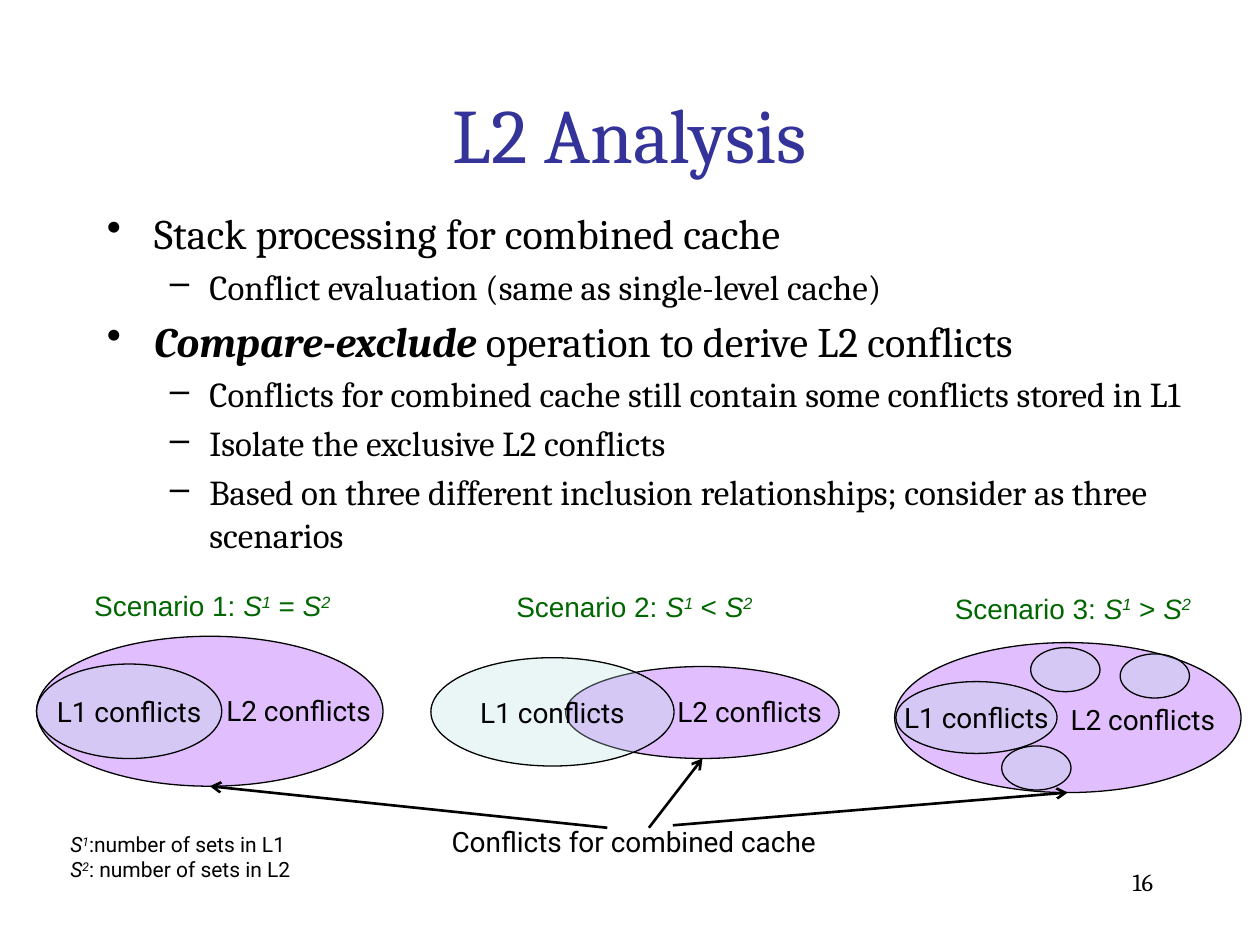
from dataclasses import dataclass

from lxml.etree import SubElement
from pptx import Presentation
from pptx.dml.color import RGBColor
from pptx.enum.shapes import MSO_CONNECTOR, MSO_SHAPE
from pptx.enum.text import MSO_ANCHOR, PP_ALIGN
from pptx.oxml.ns import qn
from pptx.util import Inches, Pt


@dataclass(frozen=True)
class Theme:
    ink: str = "000000"
    title: str = "333399"
    scenario: str = "006600"
    outer: str = "E1BEFE"
    inner: str = "BBE0E3"
    serif: str = "Cambria"
    sans: str = "Arial"
    label: str = "Roboto"
    title_size: int = 44
    body_sizes: tuple = (24, 20)
    label_size: int = 16
    number_size: int = 14
    note_size: int = 12


theme = Theme()
deck = Presentation()
deck.slide_width, deck.slide_height = Inches(10), Inches(7.5)
page = deck.slides.add_slide(deck.slide_layouts[6])

# Grid of 100 columns by 75 rows
column, row = deck.slide_width / 100, deck.slide_height / 75


def place(kind, left, top, width, height, fill=None, alpha=100):
    """Add a text box (kind None) or an outlined preset shape on the grid."""
    area = [int(left * column), int(top * row), int(width * column), int(height * row)]
    if kind is None:
        shape = page.shapes.add_textbox(*area)
    else:
        shape = page.shapes.add_shape(kind, *area)
        shape.shadow.inherit = False
        shape.fill.solid()
        shape.fill.fore_color.rgb = RGBColor.from_string(fill)
        if alpha < 100:
            color = shape.fill._xPr.find(qn("a:solidFill"))[0]
            SubElement(color, qn("a:alpha")).set("val", str(alpha * 1000))
        shape.line.color.rgb = RGBColor.from_string(theme.ink)
        shape.line.width = Pt(0.75)
    shape.text_frame.word_wrap = True
    shape.text_frame.vertical_anchor = MSO_ANCHOR.MIDDLE
    return shape


def write(para, spans, font, size, color=theme.ink, align=PP_ALIGN.CENTER):
    """Add (text, style) spans: b bold, i italic, s superscript."""
    para.alignment = align
    for text, style in spans:
        span = para.add_run()
        span.text = text
        span.font.name, span.font.size = font, Pt(size)
        span.font.color.rgb = RGBColor.from_string(color)
        span.font.bold, span.font.italic = "b" in style, "i" in style
        if "s" in style:
            span.font._element.set("baseline", "30000")


# Title
box = place(None, 7.5, 4.3, 85, 12.5)
write(box.text_frame.paragraphs[0], [("L2 Analysis", "")],
      theme.serif, theme.title_size, theme.title)

# Bulleted body
bullets = [
    (0, [("Stack processing for combined cache", "")]),
    (1, [("Conflict evaluation (same as single-level cache)", "")]),
    (0, [("Compare-exclude ", "bi"), ("operation to derive L2 conflicts", "")]),
    (1, [("Conflicts for combined cache still contain some conflicts stored in L1", "")]),
    (1, [("Isolate the exclusive L2 conflicts", "")]),
    (1, [("Based on three different inclusion relationships; "
          "consider as three scenarios", "")]),
]
marks = [("•", 3.75, 3.75), ("–", 8.13, 3.13)]
box = place(None, 7.5, 16, 88.2, 50.7)
box.text_frame.vertical_anchor = MSO_ANCHOR.TOP
for index, (level, spans) in enumerate(bullets):
    para = box.text_frame.add_paragraph() if index else box.text_frame.paragraphs[0]
    mark, margin, hang = marks[level]
    size = theme.body_sizes[level]
    para.level = level
    if index:
        para.space_before = Pt(size * 0.2)
    settings = para._p.get_or_add_pPr()
    settings.set("marL", str(int(margin * column)))
    settings.set("indent", str(int(-hang * column)))
    SubElement(settings, qn("a:buChar")).set("char", mark)
    write(para, spans, theme.serif, size, align=PP_ALIGN.LEFT)

# Slide number
box = place(None, 71.7, 68.3, 20.8, 5)
box.text_frame.vertical_anchor = MSO_ANCHOR.TOP
write(box.text_frame.paragraphs[0], [("16", "")], theme.serif, theme.number_size,
      align=PP_ALIGN.RIGHT)

# Scenarios: relation, heading, L2 ellipse, L1 ellipse, L2 label, further L1 ellipses
scenarios = [
    ("=", (5.7, 46.2), (2.9, 50.5, 27.5, 11.9), (2.9, 52.7, 14.7, 7.5), (16, 54.5), []),
    ("<", (39.2, 46.3), (44.9, 52.9, 21.7, 7.3), (34.2, 52.2, 19.3, 8.6), (51.8, 54.6), []),
    (">", (74, 46.4), (71, 51, 27.5, 11.9), (71.1, 54.1, 12.8, 5.7), (83, 55.2),
     [(81.8, 51.4), (79.5, 59.2), (88.9, 51.9)]),
]
for number, (relation, heading, outer, inner, label, extras) in enumerate(scenarios, 1):
    box = place(None, *heading, 22.3, 3.7)
    write(box.text_frame.paragraphs[0],
          [(f"Scenario {number}: ", ""), ("S", "i"), ("1", "is"),
           (f" {relation} ", ""), ("S", "i"), ("2", "is")],
          theme.sans, theme.label_size, theme.scenario)

    place(MSO_SHAPE.OVAL, *outer, theme.outer)
    ellipse = place(MSO_SHAPE.OVAL, *inner, theme.inner, 30)
    ellipse.text_frame.word_wrap = False
    write(ellipse.text_frame.paragraphs[0], [("L1 conflicts", "")],
          theme.label, theme.label_size)
    for corner in extras:
        place(MSO_SHAPE.OVAL, *corner, 5.5, 3.5, theme.inner, 30)

    box = place(None, *label, 15.4, 3.7)
    write(box.text_frame.paragraphs[0], [("L2 conflicts", "")],
          theme.label, theme.label_size)

# Shared caption and its arrows to the bottom of each L2 ellipse
box = place(None, 34.4, 64.9, 31.8, 3.7)
write(box.text_frame.paragraphs[0], [("Conflicts for combined cache", "")],
      theme.label, theme.label_size)
starts = [(48.2, 65.7), (51.5, 65.7), (53.4, 65.5)]
for (x, y), (_, _, (left, top, width, height), *_) in zip(starts, scenarios):
    arrow = page.shapes.add_connector(
        MSO_CONNECTOR.STRAIGHT, int(x * column), int(y * row),
        int((left + width / 2) * column), int((top + height) * row))
    arrow.line.color.rgb = RGBColor.from_string(theme.ink)
    arrow.line.width = Pt(1.5)
    SubElement(arrow.line._get_or_add_ln(), qn("a:tailEnd")).set("type", "arrow")
    SubElement(arrow._element.spPr, qn("a:effectLst"))

# Legend for the symbols
box = place(None, 4.6, 65.2, 20.5, 5.6)
box.text_frame.word_wrap = False
for index, meaning in enumerate([":number of sets in L1", ": number of sets in L2"]):
    para = box.text_frame.add_paragraph() if index else box.text_frame.paragraphs[0]
    write(para, [("S", "i"), (str(index + 1), "is"), (meaning, "")],
          theme.label, theme.note_size, align=PP_ALIGN.LEFT)

deck.save("out.pptx")
